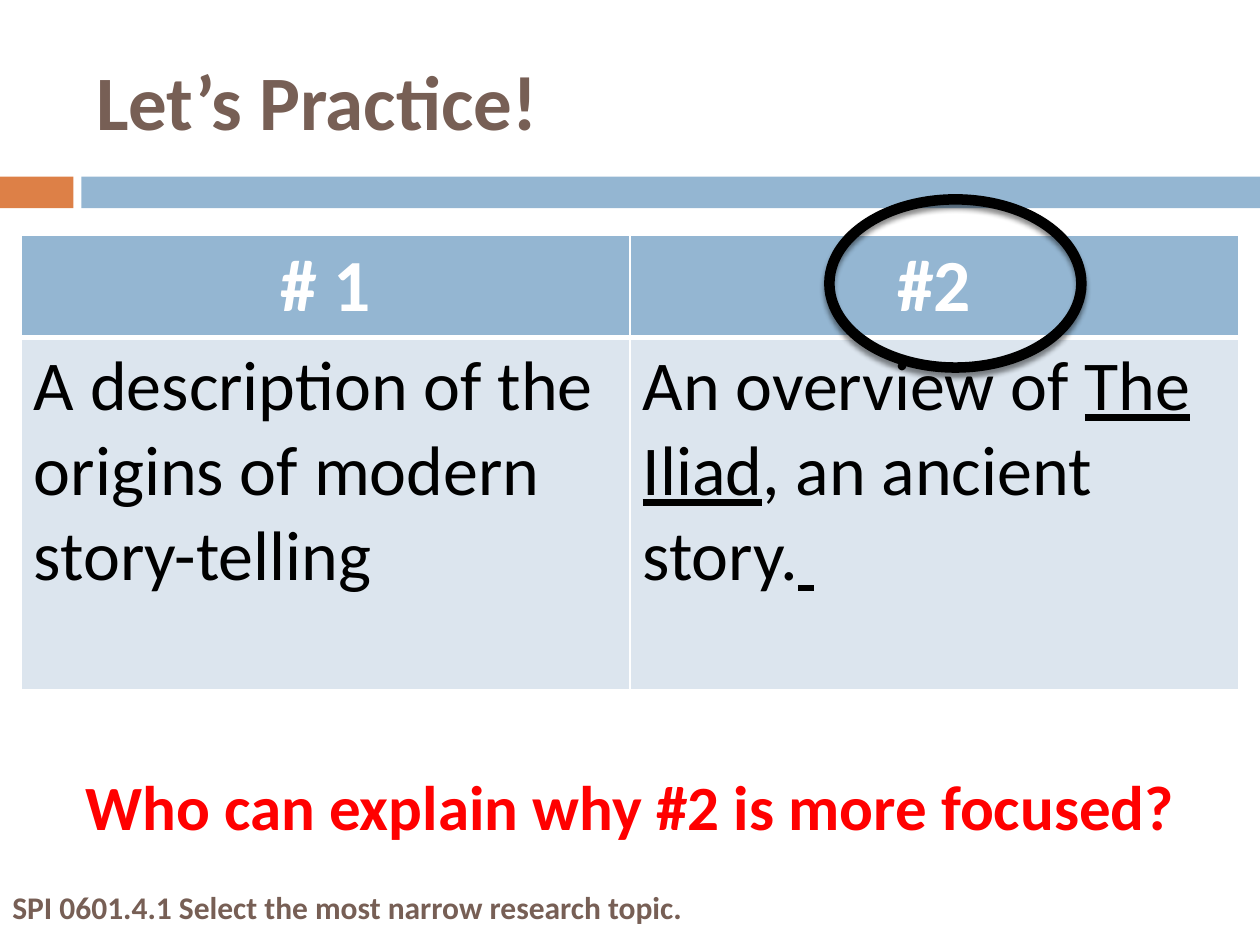
from dataclasses import dataclass

from lxml import etree
from pptx import Presentation
from pptx.dml.color import RGBColor
from pptx.enum.shapes import MSO_SHAPE
from pptx.enum.text import MSO_ANCHOR, PP_ALIGN
from pptx.oxml import parse_xml
from pptx.oxml.ns import qn
from pptx.util import Cm, Pt

RECT, OVAL = MSO_SHAPE.RECTANGLE, MSO_SHAPE.OVAL
LEFT, CENTER = PP_ALIGN.LEFT, PP_ALIGN.CENTER
TOP, MIDDLE = MSO_ANCHOR.TOP, MSO_ANCHOR.MIDDLE
NS = "http://schemas.openxmlformats.org/drawingml/2006/main"


@dataclass(frozen=True)
class Theme:
    """Hold the colours, font and type sizes of the slide."""
    font: str = "Calibri"
    blue: str = "94B6D2"
    orange: str = "DD8047"
    pale: str = "DCE5EE"
    brown: str = "775F55"
    red: str = "FF0000"
    black: str = "000000"
    white: str = "FFFFFF"
    title: int = 44
    header: int = 42
    body: int = 40
    question: int = 36
    footer: int = 18


THEME = Theme()


def rgb(value):
    """Return a colour from its hex value."""
    return RGBColor.from_string(value)


def add_runs(p, runs, size, color, bold=True, align=LEFT):
    """Fill a paragraph with (text, underlined) runs."""
    p.alignment = align
    for text, underline in runs:
        r = p.add_run()
        r.text = text
        r.font.name = THEME.font
        r.font.size = Pt(size)
        r.font.bold = bold
        r.font.underline = underline
        r.font.color.rgb = rgb(color)


def add_text(s, box, text, size, color, align=LEFT, anchor=TOP):
    """Add a wrapped one-paragraph text box."""
    tf = s.shapes.add_textbox(*map(Cm, box)).text_frame
    tf.word_wrap = True
    tf.vertical_anchor = anchor
    add_runs(tf.paragraphs[0], [(text, False)], size, color, align=align)


def add_bar(s, box, color):
    """Add a plain filled bar."""
    sp = s.shapes.add_shape(RECT, *map(Cm, box))
    sp.shadow.inherit = False
    sp.fill.solid()
    sp.fill.fore_color.rgb = rgb(color)
    sp.line.fill.background()


def add_ring(s, box, color, width):
    """Add an unfilled oval with a soft shadow below it."""
    sp = s.shapes.add_shape(OVAL, *map(Cm, box))
    sp.fill.background()
    sp.line.color.rgb = rgb(color)
    sp.line.width = Pt(width)
    sp.shadow.inherit = False
    effects = sp._element.spPr.find(qn("a:effectLst"))
    effects.append(parse_xml(
        f'<a:outerShdw xmlns:a="{NS}" blurRad="{Pt(3)}" dist="{Pt(2.4)}" '
        f'dir="5400000" rotWithShape="0"><a:srgbClr val="{color}">'
        '<a:alpha val="45000"/></a:srgbClr></a:outerShdw>'))


def style_cell(cell, fill, borders):
    """Set a cell's border widths (left, right, top, bottom) and fill."""
    tcPr = cell._tc.get_or_add_tcPr()
    for side, width in zip("LRTB", borders):
        ln = etree.SubElement(tcPr, qn(f"a:ln{side}"), w=str(Pt(width)))
        solid = etree.SubElement(ln, qn("a:solidFill"))
        etree.SubElement(solid, qn("a:srgbClr"), val=THEME.white)
    cell.fill.solid()
    cell.fill.fore_color.rgb = rgb(fill)


def add_topics(s, box, headers, bodies, heights):
    """Add the table that sets the topics side by side."""
    table = s.shapes.add_table(2, len(headers), *map(Cm, box)).table
    for row, height in zip(table.rows, heights):
        row.height = Cm(height)
    for col, (header, body) in enumerate(zip(headers, bodies)):
        head, text = table.cell(0, col), table.cell(1, col)
        style_cell(head, THEME.blue, (1, 1, 1, 3))
        style_cell(text, THEME.pale, (1, 1, 3, 1))
        add_runs(head.text_frame.paragraphs[0], [(header, False)],
                 THEME.header, THEME.white, align=CENTER)
        add_runs(text.text_frame.paragraphs[0], body,
                 THEME.body, THEME.black, bold=False)


def main():
    """Build and save the slide."""
    prs = Presentation()
    prs.slide_width, prs.slide_height = Cm(25.4), Cm(19.05)
    s = prs.slides.add_slide(prs.slide_layouts[6])

    add_bar(s, (0, 3.56, 1.48, 0.64), THEME.orange)
    add_bar(s, (1.64, 3.56, 23.76, 0.64), THEME.blue)

    headers = ["# 1", "#2"]
    bodies = [
        [("A description of the origins of modern story-telling", False)],
        [("An overview of ", False), ("The Iliad", True),
         (", an ancient story.", False), (" ", True)],
    ]
    heights = (2.05, 7.1)
    add_topics(s, (0.43, 4.74, 24.54, sum(heights)), headers, bodies, heights)
    add_ring(s, (16.72, 4.02, 5.08, 3.39), THEME.black, 6)

    add_text(s, (1.69, 0.64, 22.65, 2.75), "Let’s Practice!",
             THEME.title, THEME.brown, anchor=MIDDLE)
    add_text(s, (0, 17.78, 25.4, 1.03),
             "SPI 0601.4.1 Select the most narrow research topic.",
             THEME.footer, THEME.brown)
    add_text(s, (0.21, 15.35, 24.98, 1.8),
             "Who can explain why #2 is more focused?",
             THEME.question, THEME.red, align=CENTER)
    prs.save("out.pptx")


if __name__ == "__main__":
    main()
